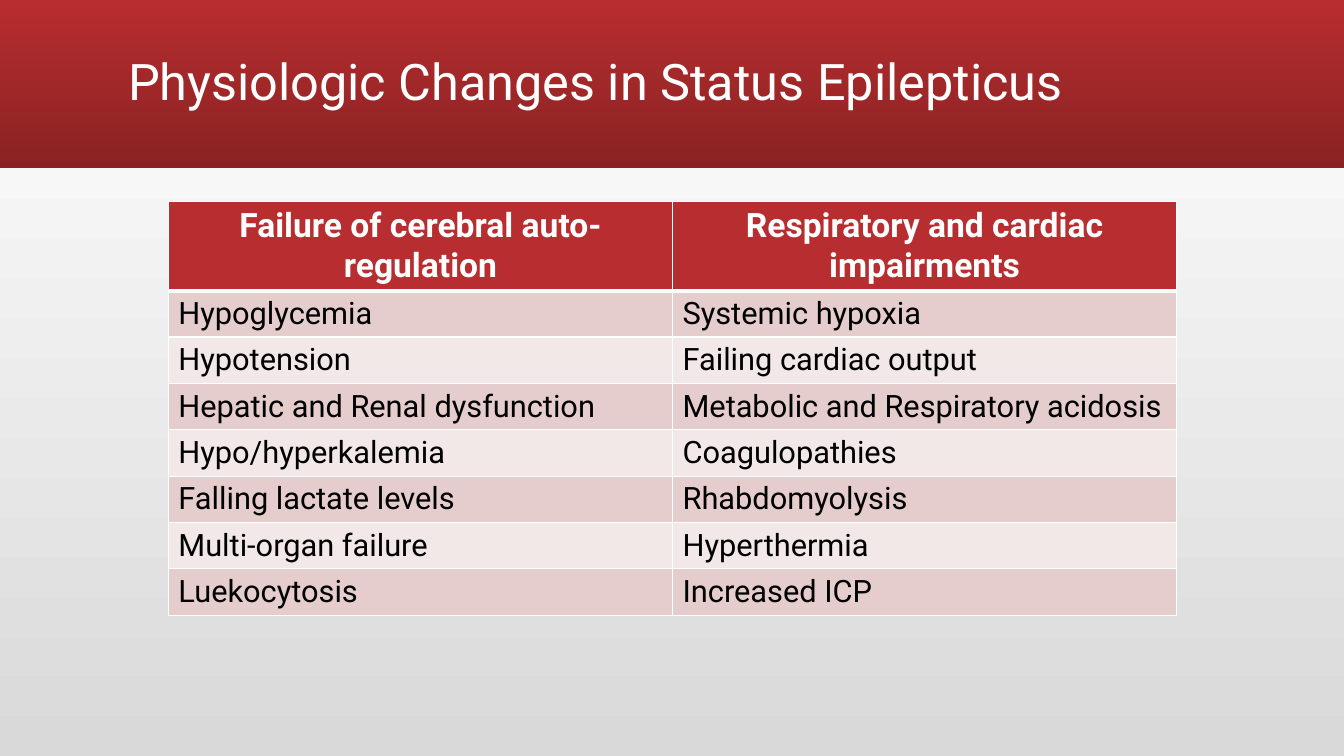
from dataclasses import dataclass

from lxml.etree import SubElement
from pptx import Presentation
from pptx.dml.color import RGBColor as RGB
from pptx.enum.shapes import MSO_SHAPE as SHAPE
from pptx.enum.text import MSO_ANCHOR as ANCHOR, MSO_AUTO_SIZE as AUTO, PP_ALIGN as ALIGN
from pptx.oxml.ns import qn
from pptx.util import Inches, Pt


@dataclass(frozen=True)
class Theme:
    font: str = "Roboto"
    red: str = "B82D2F"
    dark_red: str = "8A2223"
    white: str = "FFFFFF"
    black: str = "000000"
    gray: str = "D9D9D9"
    bands: tuple = ("E6CDCD", "F3E8E8")
    title: int = 36
    header: int = 24
    body: int = 22


T = Theme()


def add_text(p, text, size, color, bold=False):
    r = p.add_run()
    r.text = text
    r.font.name = T.font
    r.font.size = Pt(size)
    r.font.bold = bold
    r.font.color.rgb = RGB.from_string(color)


def set_gradient(fill, start, end, angle):
    fill.gradient()
    fill.gradient_angle = angle
    for stop, color, position in zip(fill.gradient_stops, (start, end), (0, 1)):
        stop.color.rgb = RGB.from_string(color)
        stop.position = position


prs = Presentation()
prs.slide_width, prs.slide_height = Inches(13.33), Inches(7.5)
s = prs.slides.add_slide(prs.slide_layouts[5])
set_gradient(s.background.fill, T.gray, T.white, 90)

banner = s.shapes.add_shape(SHAPE.RECTANGLE, 0, 0, prs.slide_width, Inches(1.67))
banner.shadow.inherit = False
banner.line.fill.background()
set_gradient(banner.fill, T.red, T.dark_red, 270)

title = s.shapes.title
title.element.addprevious(banner.element)
title.left, title.top = Inches(1.17), Inches(0.11)
title.width, title.height = Inches(11), Inches(1.45)
tf = title.text_frame
tf.word_wrap = True
tf.auto_size = AUTO.NONE
tf.vertical_anchor = ANCHOR.MIDDLE
p = tf.paragraphs[0]
p.alignment = ALIGN.LEFT
p.line_spacing = 0.9
add_text(p, "Physiologic Changes in Status Epilepticus", T.title, T.white)

changes = [
    ("Failure of cerebral auto-regulation", "Respiratory and cardiac impairments"),
    ("Hypoglycemia", "Systemic hypoxia"),
    ("Hypotension", "Failing cardiac output"),
    ("Hepatic and Renal dysfunction", "Metabolic and Respiratory acidosis"),
    ("Hypo/hyperkalemia", "Coagulopathies"),
    ("Falling lactate levels", "Rhabdomyolysis"),
    ("Multi-organ failure", "Hyperthermia"),
    ("Luekocytosis", "Increased ICP"),
]
table = s.shapes.add_table(
    len(changes), 2, Inches(1.67), Inches(2), Inches(10), Inches(4.1)
).table
for column in table.columns:
    column.width = Inches(5)

for i, row in enumerate(changes):
    is_header = i == 0
    table.rows[i].height = Inches(0.88 if is_header else 0.46)
    borders = {"lnL": 1, "lnR": 1, "lnT": 3 if i == 1 else 1, "lnB": 3 if is_header else 1}
    for j, text in enumerate(row):
        cell = table.cell(i, j)
        tcPr = cell._tc.get_or_add_tcPr()
        for side, width in borders.items():
            ln = SubElement(tcPr, qn(f"a:{side}"), w=str(Pt(width)))
            SubElement(SubElement(ln, qn("a:solidFill")), qn("a:srgbClr"), val=T.white)
        cell.fill.solid()
        cell.fill.fore_color.rgb = RGB.from_string(T.red if is_header else T.bands[(i - 1) % 2])
        p = cell.text_frame.paragraphs[0]
        if is_header:
            p.alignment = ALIGN.CENTER
            add_text(p, text, T.header, T.white, bold=True)
        else:
            add_text(p, text, T.body, T.black)

prs.save("out.pptx")
